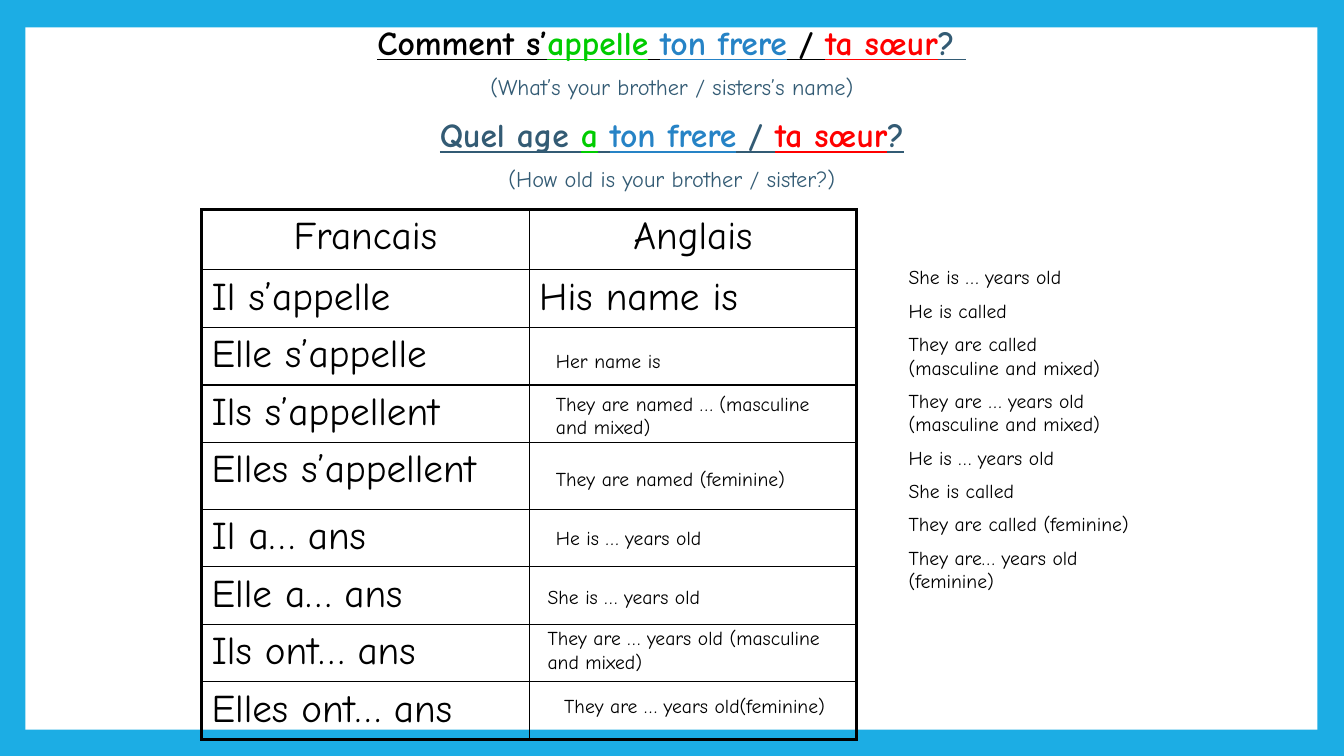
from lxml import etree
from pptx import Presentation
from pptx.dml.color import RGBColor
from pptx.enum import shapes, text
from pptx.oxml.ns import qn
from pptx.util import Cm, Pt

FONT = "Comic Neue"
BLACK = RGBColor(0x00, 0x00, 0x00)
WHITE = RGBColor(0xFF, 0xFF, 0xFF)
FRAME_BLUE = RGBColor(0x1C, 0xAD, 0xE4)
SLATE = RGBColor(0x33, 0x5B, 0x74)
GREEN = RGBColor(0x00, 0xCC, 0x00)
BLUE = RGBColor(0x26, 0x83, 0xC6)
RED = RGBColor(0xFF, 0x00, 0x00)

THIN, THICK = Pt(1), Pt(2.25)
ROW_HEIGHT = 1.45
ROW_HEIGHTS = {0: 1.52, 4: 1.68}

PHRASES = [
    ("Francais", "Anglais"),
    ("Il s’appelle", "His name is"),
    ("Elle s’appelle", ""),
    ("Ils s’appellent", ""),
    ("Elles s’appellent", ""),
    ("Il a… ans", ""),
    ("Elle a… ans", ""),
    ("Ils ont… ans", ""),
    ("Elles ont… ans", ""),
]

# left, top, width, height in cm
ANSWERS = [
    ("Her name is", 13.76, 8.68, 7.62, 0.85),
    ("They are named … (masculine and mixed)", 13.76, 9.74, 7.62, 1.44),
    ("They are named (feminine)", 13.76, 11.64, 7.62, 0.85),
    ("He is … years old", 13.76, 13.12, 7.62, 0.85),
    ("She is … years old", 13.55, 14.61, 7.62, 0.85),
    ("They are … years old (masculine and mixed)", 13.55, 15.66, 8.04, 1.44),
    ("They are … years old(feminine)", 13.97, 17.36, 7.62, 0.85),
]

WORD_BANK = [
    "She is … years old",
    "He is called",
    "They are called (masculine and mixed)",
    "They are … years old (masculine and mixed)",
    "He is … years old",
    "She is called",
    "They are called (feminine)",
    "They are… years old (feminine)",
]


def add_run(p, content, color=BLACK, **fmt):
    r = p.add_run()
    r.text = content
    r.font.color.rgb = color
    for name, value in {"name": FONT, **fmt}.items():
        setattr(r.font, name, value)


def add_text(s, box, paragraphs, align=text.PP_ALIGN.LEFT):
    """Each paragraph is a list of (content, colour, format) runs."""
    tf = s.shapes.add_textbox(*map(Cm, box)).text_frame
    tf.word_wrap = True
    for i, runs in enumerate(paragraphs):
        p = tf.paragraphs[0] if i == 0 else tf.add_paragraph()
        p.alignment = align
        for content, color, fmt in runs:
            add_run(p, content, color, **fmt)
        if i:
            p.space_before = int(fmt["size"] / 2)


def add_question(s, top, height, ink, opening, verb, ending, translation):
    title = {"size": Pt(24), "bold": True, "underline": True}
    parts = [(opening, ink), (verb, GREEN), (" ", ink), ("ton frere", BLUE),
             (" / ", ink), ("ta sœur", RED), (ending, SLATE)]
    question = [(content, color, title) for content, color in parts]
    add_text(s, (5.72, top, 22.43, height),
             [question, [(translation, SLATE, {"size": Pt(16)})]],
             text.PP_ALIGN.CENTER)


def set_borders(cell, widths):
    tc_pr = cell._tc.get_or_add_tcPr()
    for side, width in widths.items():
        ln = etree.SubElement(tc_pr, qn(f"a:ln{side}"), w=str(int(width)))
        fill = etree.SubElement(ln, qn("a:solidFill"))
        etree.SubElement(fill, qn("a:srgbClr"), val=str(BLACK))


def add_phrase_table(s):
    last = len(PHRASES) - 1
    heights = [ROW_HEIGHTS.get(i, ROW_HEIGHT) for i in range(len(PHRASES))]
    table = s.shapes.add_table(len(PHRASES), 2, Cm(5.08), Cm(5.28),
                               Cm(16.51), Cm(sum(heights))).table
    table.first_row = table.horz_banding = False
    for i, phrases in enumerate(PHRASES):
        table.rows[i].height = Cm(heights[i])
        for j, phrase in enumerate(phrases):
            cell = table.cell(i, j)
            set_borders(cell, {
                "L": THICK if j == 0 else THIN,
                "R": THICK if j == 1 else THIN,
                "T": THICK if i == 0 else THIN,
                "B": THICK if i == last else THIN,
            })
            cell.fill.background()
            p = cell.text_frame.paragraphs[0]
            p.alignment = text.PP_ALIGN.LEFT if i else text.PP_ALIGN.CENTER
            if phrase:
                add_run(p, phrase, size=Pt(28))


def add_page(s):
    s.background.fill.solid()
    s.background.fill.fore_color.rgb = FRAME_BLUE
    sp = s.shapes.add_shape(shapes.MSO_SHAPE.RECTANGLE,
                            Cm(0.64), Cm(0.69), Cm(32.56), Cm(17.7))
    sp.shadow.inherit = False
    sp.fill.solid()
    sp.fill.fore_color.rgb = WHITE
    sp.line.fill.background()


def main():
    prs = Presentation()
    prs.slide_width, prs.slide_height = Cm(33.87), Cm(19.05)
    s = prs.slides.add_slide(prs.slide_layouts[6])
    add_page(s)
    add_phrase_table(s)
    add_question(s, 0.42, 3.81, BLACK, "Comment s’", "appelle", "? ",
                 "(What’s your brother / sisters’s name)")
    add_question(s, 2.75, 2.29, SLATE, "Quel age ", "a", "?",
                 "(How old is your brother / sister?)")
    small = {"size": Pt(14)}
    add_text(s, (22.65, 6.56, 6.14, 10.44),
             [[(phrase, BLACK, small)] for phrase in WORD_BANK])
    for answer, *box in ANSWERS:
        add_text(s, box, [[(answer, BLACK, small)]])
    prs.save("out.pptx")


if __name__ == "__main__":
    main()
